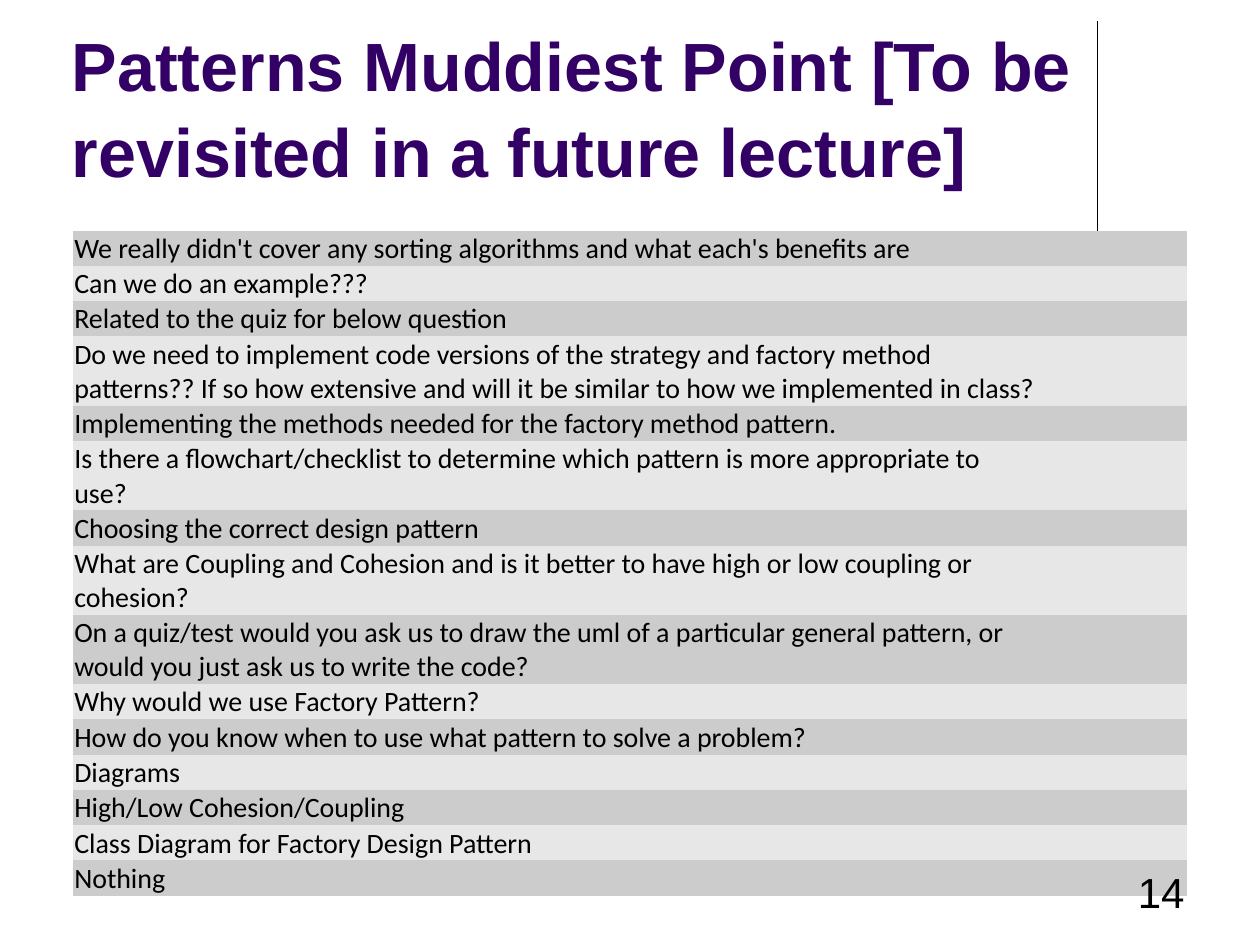
from dataclasses import dataclass

from lxml.etree import SubElement
from pptx import Presentation
from pptx.dml.color import RGBColor
from pptx.enum.shapes import MSO_CONNECTOR
from pptx.enum.text import MSO_ANCHOR, PP_ALIGN
from pptx.oxml.ns import qn
from pptx.slide import Slide
from pptx.table import _Cell
from pptx.util import Inches, Pt


@dataclass(frozen=True)
class Theme:
    heading_font: str = "Arial"
    table_font: str = "Calibri"
    title_color: RGBColor = RGBColor(0x33, 0x00, 0x66)
    ink: RGBColor = RGBColor(0, 0, 0)
    bands: tuple = (RGBColor(0xCC, 0xCC, 0xCC), RGBColor(0xE7, 0xE7, 0xE7))
    title_size: int = 39
    table_size: int = 16
    number_size: int = 24


@dataclass(frozen=True)
class Label:
    text: str
    left: float
    top: float
    width: float
    height: float
    size: int
    color: RGBColor
    bold: bool = False
    align: PP_ALIGN = PP_ALIGN.LEFT
    side_inset: float = 0.1
    bottom_inset: float = 0.05
    line_spacing: float = 1.0


@dataclass(frozen=True)
class Question:
    text: str
    lines: int = 1


THEME = Theme()
LINE_HEIGHTS = {1: 0.28, 2: 0.55}
COLUMN_WIDTHS = (7.67, 1.17)

QUESTIONS = (
    Question("We really didn't cover any sorting algorithms and what each's benefits are"),
    Question("Can we do an example???"),
    Question("Related to the quiz for below question"),
    Question("Do we need to implement code versions of the strategy and factory method patterns?? "
             "If so how extensive and will it be similar to how we implemented in class?", 2),
    Question("Implementing the methods needed for the factory method pattern."),
    Question("Is there a flowchart/checklist to determine which pattern is more appropriate to use?", 2),
    Question("Choosing the correct design pattern"),
    Question("What are Coupling and Cohesion and is it better to have high or low coupling or cohesion?", 2),
    Question("On a quiz/test would you ask us to draw the uml of a particular general pattern, "
             "or would you just ask us to write the code?", 2),
    Question("Why would we use Factory Pattern?"),
    Question("How do you know when to use what pattern to solve a problem?"),
    Question("Diagrams"),
    Question("High/Low Cohesion/Coupling"),
    Question("Class Diagram for Factory Design Pattern"),
    Question("Nothing"),
)

TITLE = Label("Patterns Muddiest Point [To be revisited in a future lecture]",
              0.5, 0.13, 8.25, 1.42, THEME.title_size, THEME.title_color, bold=True,
              side_inset=0.07, bottom_inset=0.03, line_spacing=1.05)
PAGE_NUMBER = Label("14", 7.17, 6.83, 2.33, 0.5, THEME.number_size, THEME.ink, align=PP_ALIGN.RIGHT)


def draw_label(page: Slide, label: Label) -> None:
    box = page.shapes.add_textbox(Inches(label.left), Inches(label.top),
                                  Inches(label.width), Inches(label.height))
    frame = box.text_frame
    frame.text = label.text
    frame.word_wrap = True
    frame.vertical_anchor = MSO_ANCHOR.BOTTOM
    frame.margin_left = frame.margin_right = Inches(label.side_inset)
    frame.margin_bottom = Inches(label.bottom_inset)
    para = frame.paragraphs[0]
    para.alignment = label.align
    para.line_spacing = label.line_spacing
    span = para.runs[0]
    span.font.name = THEME.heading_font
    span.font.size = Pt(label.size)
    span.font.bold = label.bold
    span.font.color.rgb = label.color


def draw_rule(page: Slide) -> None:
    rule = page.shapes.add_connector(MSO_CONNECTOR.STRAIGHT, Inches(8.71), Inches(0.17),
                                     Inches(8.71), Inches(1.83))
    rule.line.color.rgb = THEME.ink
    rule.line.width = Pt(0.75)
    SubElement(rule._element.spPr, qn("a:effectLst"))


def style_cell(cell: _Cell, band: RGBColor) -> None:
    cell.fill.solid()
    cell.fill.fore_color.rgb = band
    cell.vertical_anchor = MSO_ANCHOR.BOTTOM
    cell.margin_left = cell.margin_right = cell.margin_top = Inches(0.01)
    cell.margin_bottom = 0
    para = cell.text_frame.paragraphs[0]
    for span in para.runs:
        span.font.name = THEME.table_font
        span.font.size = Pt(THEME.table_size)
        span.font.color.rgb = THEME.ink
    if not para.runs:
        SubElement(para._p, qn("a:endParaRPr"), sz=str(THEME.table_size * 100))


def draw_questions(page: Slide) -> None:
    heights = [LINE_HEIGHTS[question.lines] for question in QUESTIONS]
    table = page.shapes.add_table(len(QUESTIONS), len(COLUMN_WIDTHS), Inches(0.58), Inches(1.83),
                                  Inches(sum(COLUMN_WIDTHS)), Inches(sum(heights))).table
    table.first_row = False
    table.horz_banding = False
    for column, width in zip(table.columns, COLUMN_WIDTHS):
        column.width = Inches(width)
    for index, (row, question) in enumerate(zip(table.rows, QUESTIONS)):
        row.height = Inches(heights[index])
        row.cells[0].text_frame.text = question.text
        for cell in row.cells:
            style_cell(cell, THEME.bands[index % 2])
    style_id = table._tbl.tblPr.find(qn("a:tableStyleId"))
    style_id.text = "{2D5ABB26-0587-4C30-8999-92F81FD0307C}"


def main() -> None:
    deck = Presentation()
    deck.slide_width = Inches(10)
    deck.slide_height = Inches(7.5)
    page = deck.slides.add_slide(deck.slide_layouts[6])
    draw_rule(page)
    draw_label(page, TITLE)
    draw_questions(page)
    draw_label(page, PAGE_NUMBER)
    deck.save("out.pptx")


if __name__ == "__main__":
    main()
